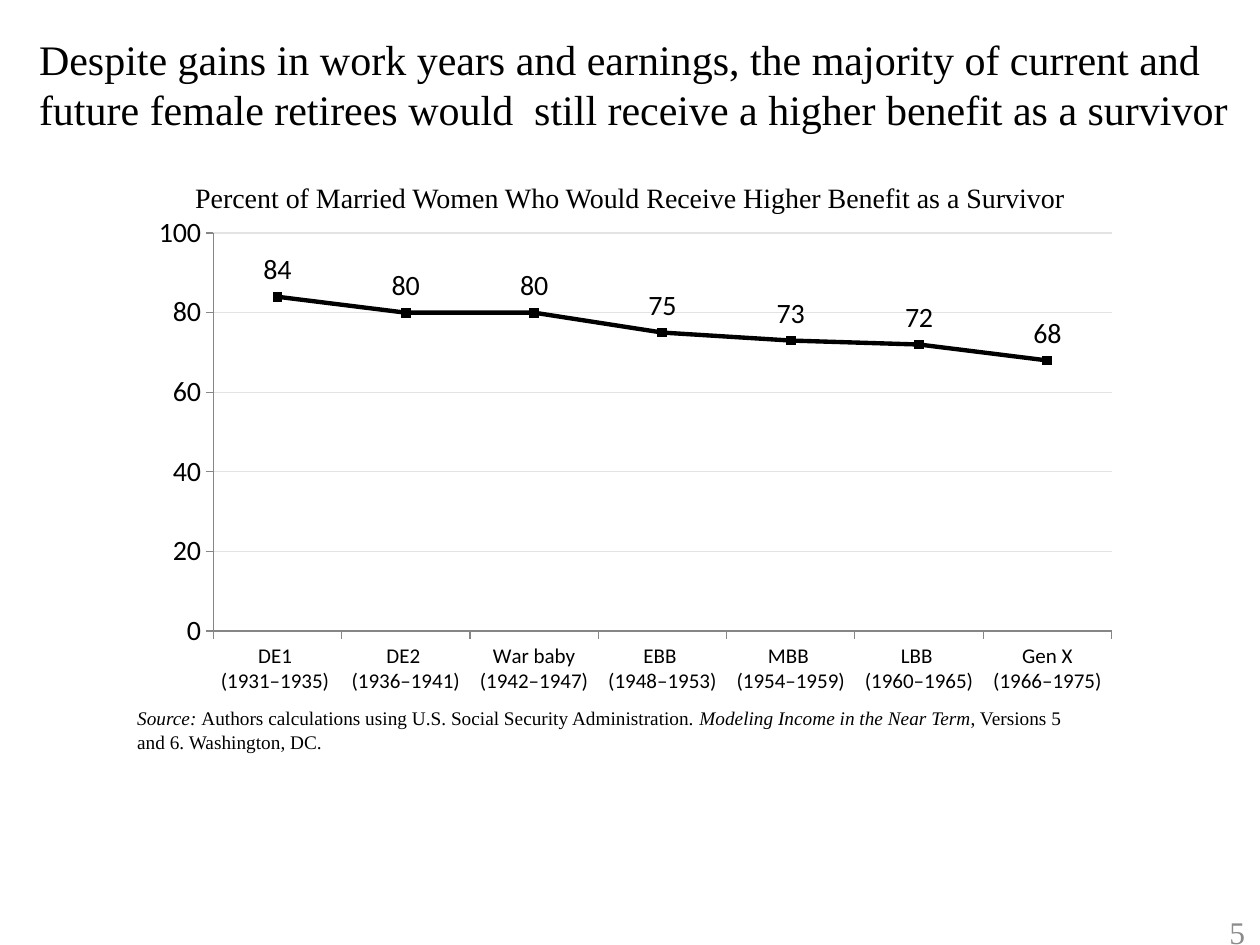
from lxml import etree
from pptx import Presentation
from pptx.chart.data import CategoryChartData
from pptx.dml.color import RGBColor
from pptx.enum.chart import XL_CHART_TYPE, XL_LABEL_POSITION, XL_MARKER_STYLE, XL_TICK_MARK
from pptx.enum.text import MSO_ANCHOR, MSO_AUTO_SIZE, PP_ALIGN
from pptx.oxml.ns import qn
from pptx.util import Inches, Pt

COLORS = {"text": "000000", "number": "8C8C8C", "grid": "E3E3E3", "axis": "868686"}
SERIF = "Times New Roman"
SANS = "Calibri"

COHORTS = [
    ("DE1 \n(1931–1935) ", 84),
    ("DE2 \n(1936–1941)", 80),
    ("War baby (1942–1947)", 80),
    ("EBB \n(1948–1953)", 75),
    ("MBB \n(1954–1959)", 73),
    ("LBB \n(1960–1965)", 72),
    ("Gen X\n(1966–1975)", 68),
]
SOURCE_LINES = [
    [
        ("Source: ", True),
        ("Authors calculations using U.S. Social Security Administration.\u00a0", False),
        ("Modeling Income in the Near Term", True),
        (", Versions 5 ", False),
    ],
    [("and 6. Washington, DC.", False)],
]


def color(name):
    return RGBColor.from_string(COLORS[name])


def style_font(font, size, name=SERIF, shade="text"):
    font.name = name
    font.size = Pt(size)
    font.color.rgb = color(shade)


def style_line(line, shade, width):
    line.color.rgb = color(shade)
    line.width = Pt(width)


def add_title(page, left, top, width, height):
    title = page.shapes.title
    title.left, title.top, title.width, title.height = left, top, width, height
    frame = title.text_frame
    frame.text = (
        "Despite gains in work years and earnings, the majority of current and "
        "future female retirees would  still receive a higher benefit as a survivor"
    )
    frame.auto_size = MSO_AUTO_SIZE.NONE
    frame.vertical_anchor = MSO_ANCHOR.MIDDLE
    para = frame.paragraphs[0]
    para.alignment = PP_ALIGN.LEFT
    para._p.get_or_add_pPr().set("marL", str(Inches(0.06)))
    style_font(para.runs[0].font, 24)


def add_text_box(page, left, top, width, height):
    frame = page.shapes.add_textbox(left, top, width, height).text_frame
    frame.word_wrap = True
    return frame


def add_label(page, left, top, width, height, text, size, align, shade="text"):
    frame = add_text_box(page, left, top, width, height)
    frame.text = text
    frame.vertical_anchor = MSO_ANCHOR.MIDDLE
    para = frame.paragraphs[0]
    para.alignment = align
    style_font(para.runs[0].font, size, shade=shade)


def add_source(page, left, top, width, height):
    para = add_text_box(page, left, top, width, height).paragraphs[0]
    for index, line in enumerate(SOURCE_LINES):
        if index:
            para.add_line_break()
        for text, italic in line:
            span = para.add_run()
            span.text = text
            style_font(span.font, 11)
            span.font.italic = italic


def set_plot_layout(chart, x, y, w, h):
    plot_area = chart._chartSpace.chart.plotArea
    layout = plot_area.find(qn("c:layout"))
    if layout is None:
        layout = etree.Element(qn("c:layout"))
        plot_area.insert(0, layout)
    manual = etree.SubElement(layout, qn("c:manualLayout"))
    settings = [("layoutTarget", "inner"), ("xMode", "edge"), ("yMode", "edge"),
                ("x", x), ("y", y), ("w", w), ("h", h)]
    for tag, value in settings:
        etree.SubElement(manual, qn(f"c:{tag}")).set("val", str(value))


def style_axes(chart):
    for axis, size in ((chart.category_axis, 12), (chart.value_axis, 16)):
        axis.major_tick_mark = XL_TICK_MARK.OUTSIDE
        axis.minor_tick_mark = XL_TICK_MARK.NONE
        style_font(axis.tick_labels.font, size, SANS)
        style_line(axis.format.line, "axis", 0.75)
    values = chart.value_axis
    values.minimum_scale = 0
    values.maximum_scale = 100
    values.major_unit = 20
    values.tick_labels.number_format = "0"
    values.tick_labels.number_format_is_linked = False
    style_line(values.major_gridlines.format.line, "grid", 0.75)


def style_series(series):
    series.smooth = False
    style_line(series.format.line, "text", 2.5)
    marker = series.marker
    marker.style = XL_MARKER_STYLE.SQUARE
    marker.size = 5
    marker.format.fill.solid()
    marker.format.fill.fore_color.rgb = color("text")
    style_line(marker.format.line, "text", 0.75)
    labels = series.data_labels
    labels.show_value = True
    labels.position = XL_LABEL_POSITION.ABOVE
    labels.number_format = "#,##0"
    labels.number_format_is_linked = False
    style_font(labels.font, 16, SANS)


def add_cohort_chart(page, left, top, width, height):
    data = CategoryChartData()
    data.categories = [cohort for cohort, _ in COHORTS]
    data.add_series("Series 1", [percent for _, percent in COHORTS])
    chart = page.shapes.add_chart(
        XL_CHART_TYPE.LINE_MARKERS, left, top, width, height, data
    ).chart
    chart.has_legend = False
    chart.has_title = False
    style_font(chart.font, 10, SANS)
    chart.plots[0].vary_by_categories = False
    set_plot_layout(chart, 0.07, 0.04, 0.92, 0.79)
    style_axes(chart)
    style_series(chart.plots[0].series[0])


def main():
    deck = Presentation()
    deck.slide_width, deck.slide_height = Inches(10), Inches(7.5)
    page = deck.slides.add_slide(deck.slide_layouts[5])
    add_title(page, Inches(0.15), Inches(0), Inches(9.85), Inches(1.33))
    add_label(page, Inches(7.9), Inches(7.15), Inches(2.08), Inches(0.5),
              "5", 18, PP_ALIGN.RIGHT, "number")
    add_source(page, Inches(0.99), Inches(5.56), Inches(8.59), Inches(0.66))
    add_cohort_chart(page, Inches(1.15), Inches(1.69), Inches(7.75), Inches(4))
    add_label(page, Inches(0), Inches(1.38), Inches(10), Inches(0.37),
              "Percent of Married Women Who Would Receive Higher Benefit as a Survivor",
              16, PP_ALIGN.CENTER)
    deck.save("out.pptx")


if __name__ == "__main__":
    main()
